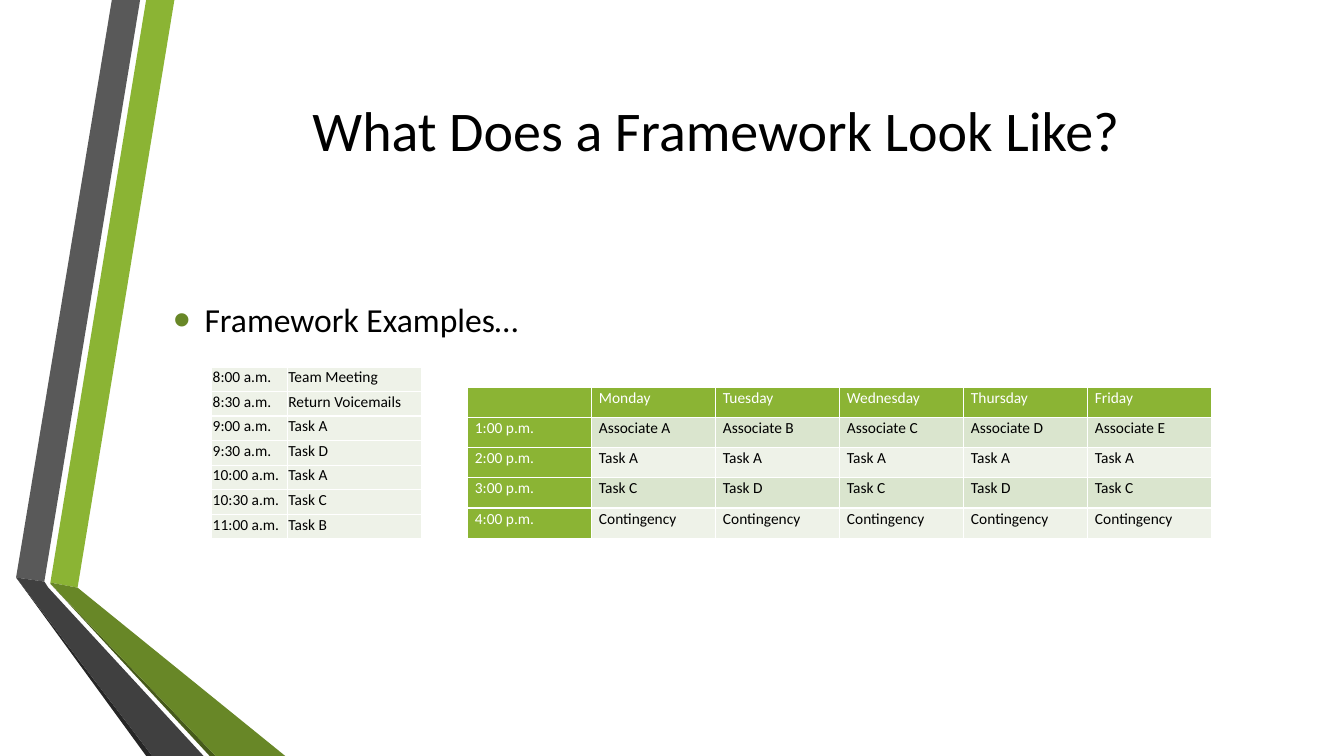
from dataclasses import dataclass

from lxml.etree import SubElement
from pptx import Presentation
from pptx.dml.color import RGBColor
from pptx.enum.text import MSO_ANCHOR as Anchor, PP_ALIGN as Align
from pptx.oxml.ns import qn
from pptx.slide import Slide
from pptx.table import _Cell as Cell
from pptx.text.text import _Paragraph as Paragraph
from pptx.util import Pt

PX = 9144  # EMU; 100 px make one inch
FONT = "Calibri"
BLACK, WHITE = "000000", "FFFFFF"
GREEN, DARK_GREEN = "8BB434", "688727"
BAND, PALE = "DAE5CE", "EEF2E8"


@dataclass(frozen=True)
class Ribbon:
    color: str
    points: tuple[tuple[int, int], ...]


@dataclass(frozen=True)
class Schedule:
    left: int
    top: int
    column_widths: tuple[int, ...]
    row_height: int
    margins: tuple[int, int, int, int]  # left, top, right, bottom
    anchor: Anchor
    line_spacing: float
    has_headers: bool
    rows: tuple[tuple[str, ...], ...]


RIBBONS = (
    Ribbon(GREEN, ((50, 578), (77, 583), (173, 0), (145, 0))),
    Ribbon("595959", ((139, 0), (111, 0), (16, 573), (44, 577))),
    Ribbon("262626", ((16, 573), (145, 750), (151, 750))),
    Ribbon("465A1A", ((50, 579), (208, 750), (214, 750))),
    Ribbon(DARK_GREEN, ((50, 578), (50, 579), (214, 750), (283, 750), (77, 583))),
    Ribbon("404040", ((202, 750), (48, 583), (44, 577), (16, 573), (151, 750))),
)

MORNING = Schedule(
    210, 364, (75, 133), 24, (1, 1, 1, 5), Anchor.BOTTOM, 1.0, False,
    (
        ("8:00 a.m.", "Team Meeting"),
        ("8:30 a.m.", "Return Voicemails"),
        ("9:00 a.m.", "Task A"),
        ("9:30 a.m.", "Task D"),
        ("10:00 a.m.", "Task A"),
        ("10:30 a.m.", "Task C"),
        ("11:00 a.m.", "Task B"),
    ),
)
WEEK = Schedule(
    464, 384, (123,) * 6, 30, (7, 0, 7, 0), Anchor.TOP, 1.07, True,
    (
        ("", "Monday", "Tuesday", "Wednesday", "Thursday", "Friday"),
        ("1:00 p.m.", *(f"Associate {letter}" for letter in "ABCDE")),
        ("2:00 p.m.", *("Task A",) * 5),
        ("3:00 p.m.", *(f"Task {letter}" for letter in "CDCDC")),
        ("4:00 p.m.", *("Contingency",) * 5),
    ),
)


def rgb(color: str) -> RGBColor:
    return RGBColor.from_string(color)


def add_run(paragraph: Paragraph, text: str, size: int, color: str = BLACK) -> None:
    run = paragraph.add_run()
    run.text = text
    run.font.name = FONT
    run.font.size = Pt(size)
    run.font.bold = False
    run.font.color.rgb = rgb(color)


def draw_ribbon(slide: Slide, ribbon: Ribbon) -> None:
    start, *others = ribbon.points
    builder = slide.shapes.build_freeform(*start, scale=PX)
    builder.add_line_segments(others, close=True)
    shape = builder.convert_to_shape()
    shape.shadow.inherit = False
    shape.fill.solid()
    shape.fill.fore_color.rgb = rgb(ribbon.color)
    shape.line.fill.background()


def add_title(slide: Slide, text: str) -> None:
    title = slide.shapes.title
    title.left, title.top, title.width, title.height = (
        px * PX for px in (162, 75, 1096, 106))
    title.text_frame.vertical_anchor = Anchor.MIDDLE
    paragraph = title.text_frame.paragraphs[0]
    paragraph.alignment = Align.CENTER
    add_run(paragraph, text, 40)


def add_bullet(slide: Slide, text: str) -> None:
    box = slide.shapes.add_textbox(*(px * PX for px in (162, 252, 1108, 452)))
    frame = box.text_frame
    frame.word_wrap = True
    frame.margin_top = 45 * PX
    paragraph = frame.paragraphs[0]
    properties = paragraph._p.get_or_add_pPr()
    properties.set("marL", str(31 * PX))
    properties.set("indent", str(-31 * PX))
    bullet_color = SubElement(properties, qn("a:buClr"))
    SubElement(bullet_color, qn("a:srgbClr"), val=DARK_GREEN)
    SubElement(properties, qn("a:buSzPct"), val="145000")
    SubElement(properties, qn("a:buFont"), typeface="Arial")
    SubElement(properties, qn("a:buChar"), char="•")
    add_run(paragraph, text, 24)


def add_borders(cell: Cell) -> None:
    properties = cell._tc.get_or_add_tcPr()
    for side in ("lnL", "lnR", "lnT", "lnB"):
        line = SubElement(properties, qn(f"a:{side}"), w=str(Pt(1)))
        fill = SubElement(line, qn("a:solidFill"))
        SubElement(fill, qn("a:srgbClr"), val=WHITE)


def draw_schedule(slide: Slide, schedule: Schedule) -> None:
    row_count, column_count = len(schedule.rows), len(schedule.column_widths)
    table = slide.shapes.add_table(
        row_count, column_count, schedule.left * PX, schedule.top * PX,
        sum(schedule.column_widths) * PX, row_count * schedule.row_height * PX,
    ).table
    table.first_row = table.first_col = schedule.has_headers
    table.horz_banding = schedule.has_headers
    for column, width in zip(table.columns, schedule.column_widths):
        column.width = width * PX
    for r, row in enumerate(schedule.rows):
        table.rows[r].height = schedule.row_height * PX
        for c, text in enumerate(row):
            cell = table.cell(r, c)
            is_header = schedule.has_headers and 0 in (r, c)
            is_band = schedule.has_headers and r % 2 == 1
            add_borders(cell)
            cell.fill.solid()
            cell.fill.fore_color.rgb = rgb(
                GREEN if is_header else BAND if is_band else PALE)
            (cell.margin_left, cell.margin_top,
             cell.margin_right, cell.margin_bottom) = (
                px * PX for px in schedule.margins)
            cell.vertical_anchor = schedule.anchor
            paragraph = cell.text_frame.paragraphs[0]
            paragraph.line_spacing = schedule.line_spacing
            if text:
                add_run(paragraph, text, 11, WHITE if is_header else BLACK)
            else:
                SubElement(paragraph._p, qn("a:endParaRPr"), sz="1100")


def main() -> None:
    deck = Presentation()
    deck.slide_width, deck.slide_height = 1333 * PX, 750 * PX
    slide = deck.slides.add_slide(deck.slide_layouts[5])
    for ribbon in RIBBONS:
        draw_ribbon(slide, ribbon)
    add_title(slide, "What Does a Framework Look Like?")
    add_bullet(slide, "Framework Examples…")
    for schedule in (MORNING, WEEK):
        draw_schedule(slide, schedule)
    deck.save("out.pptx")


if __name__ == "__main__":
    main()
